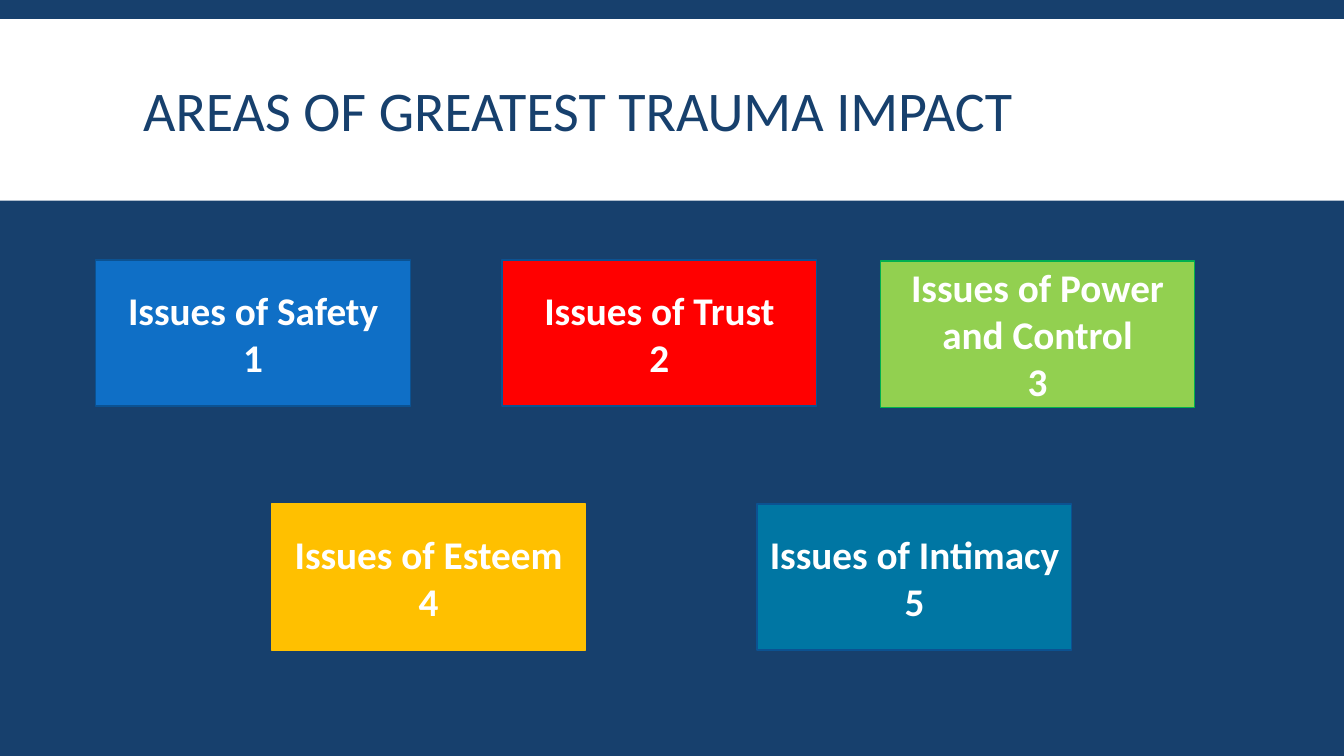
from pptx import Presentation
from pptx.dml.color import RGBColor
from pptx.enum.shapes import MSO_SHAPE
from pptx.enum.text import MSO_ANCHOR, MSO_AUTO_SIZE, PP_ALIGN
from pptx.util import Inches, Pt

HUES = {
    "navy": "17406D", "white": "FFFFFF", "blue": "0F6FC6", "edge": "0B5292",
    "red": "FF0000", "lime": "92D050", "green": "00B050", "gold": "FFC000",
    "teal": "0076A3",
}
ISSUES = [
    ("Issues of Safety", 0.95, 2.58, "blue", "edge"),
    ("Issues of Trust", 4.98, 2.58, "red", "edge"),
    ("Issues of Power and Control", 8.73, 2.59, "lime", "green"),
    ("Issues of Esteem", 2.69, 5, "gold", "gold"),
    ("Issues of Intimacy", 7.51, 5, "teal", "edge"),
]


def hue(name):
    return RGBColor.from_string(HUES[name])


def write(frame, text, size=28, color="white", bold=False,
          align=PP_ALIGN.CENTER, space=1.0):
    frame.text = text
    frame.word_wrap = True
    frame.auto_size = MSO_AUTO_SIZE.NONE
    frame.vertical_anchor = MSO_ANCHOR.MIDDLE
    for para in frame.paragraphs:
        para.alignment = align
        para.line_spacing = space
        for run in para.runs:
            font = run.font
            font.name = "Calibri"
            font.size = Pt(size)
            font.bold = bold
            font.color.rgb = hue(color)


class Deck:
    """Holds the slide and draws its elements in one style."""

    def __init__(self):
        self.show = Presentation()
        self.show.slide_width = Inches(13.33)
        self.show.slide_height = Inches(7.5)
        self.slide = self.show.slides.add_slide(self.show.slide_layouts[5])
        back = self.slide.background.fill
        back.solid()
        back.fore_color.rgb = hue("navy")

    def title(self, text, left, top, width, height):
        head = self.slide.shapes.title
        head.left, head.top = Inches(left), Inches(top)
        head.width, head.height = Inches(width), Inches(height)
        write(head.text_frame, text, size=40, color="navy",
              align=PP_ALIGN.LEFT, space=0.85)

    def box(self, left, top, width, height, fill, line=None):
        shape = self.slide.shapes.add_shape(
            MSO_SHAPE.RECTANGLE, Inches(left), Inches(top),
            Inches(width), Inches(height))
        shape.shadow.inherit = False
        shape.fill.solid()
        shape.fill.fore_color.rgb = hue(fill)
        if line:
            shape.line.color.rgb = hue(line)
            shape.line.width = Pt(1)
        else:
            shape.line.fill.background()
        return shape

    def band(self, top, height):
        shape = self.box(0, top, 13.33, height, "white")
        self.slide.shapes.title.element.addprevious(shape.element)

    def card(self, text, left, top, fill, line):
        shape = self.box(left, top, 3.12, 1.45, fill, line)
        write(shape.text_frame, text, bold=True)


def main():
    deck = Deck()
    deck.band(0.19, 1.8)
    deck.title("AREAS OF GREATEST TRAUMA IMPACT", 1.32, 0.31, 10.7, 1.65)
    for rank, (name, left, top, fill, line) in enumerate(ISSUES, 1):
        deck.card(f"{name}\n{rank}", left, top, fill, line)
    deck.show.save("out.pptx")


if __name__ == "__main__":
    main()
